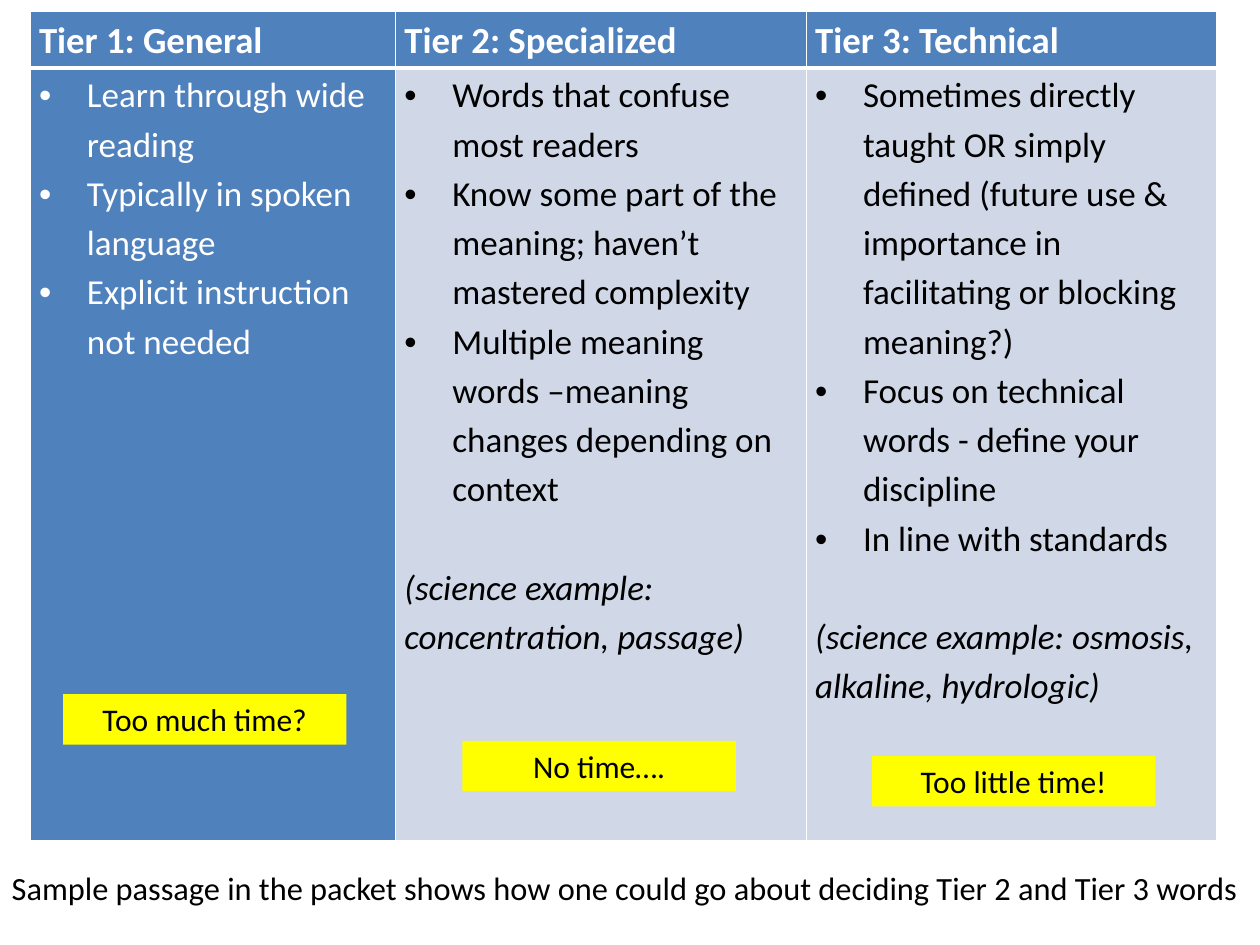
from lxml.etree import SubElement
from pptx import Presentation
from pptx.dml.color import RGBColor
from pptx.enum.shapes import MSO_SHAPE as Shape
from pptx.enum.text import MSO_ANCHOR as Anchor, PP_ALIGN as Align
from pptx.oxml import parse_xml
from pptx.oxml.ns import nsdecls, qn
from pptx.util import Inches, Pt

BLUE = RGBColor(0x4F, 0x81, 0xBD)
PALE = RGBColor(0xD0, 0xD8, 0xE8)
YELLOW = RGBColor(0xFF, 0xFF, 0x00)
WHITE = RGBColor(0xFF, 0xFF, 0xFF)
BLACK = RGBColor(0x00, 0x00, 0x00)

# heading, column width, fill, text colour, bullets, example
TIERS = [
    ("Tier 1: General", 2.9, BLUE, WHITE,
     ["Learn through wide reading",
      "Typically in spoken language",
      "Explicit instruction not needed"], None),
    ("Tier 2: Specialized", 3.26, PALE, BLACK,
     ["Words that confuse most readers",
      "Know some part of the meaning; haven’t mastered complexity",
      "Multiple meaning words –meaning changes depending on context"],
     "(science example: concentration, passage)"),
    ("Tier 3: Technical", 3.26, PALE, BLACK,
     ["Sometimes directly taught OR simply defined (future use & "
      "importance in facilitating or blocking meaning?)",
      "Focus on technical words - define your discipline",
      "In line with standards"],
     "(science example: osmosis, alkaline, hydrologic)"),
]

# text, left, top, width
TIME_LABELS = [
    ("Too much time?", 0.5, 5.51, 2.25),
    ("No time….", 3.67, 5.88, 2.17),
    ("Too little time!", 6.92, 6, 2.25),
]


def style(paragraph, size, color, bold=False, italic=False):
    for run in paragraph.runs:
        font = run.font
        font.name, font.size = "Calibri", Pt(size)
        font.color.rgb = color
        font.bold, font.italic = bold, italic


def format_cell(cell, fill, thick_side):
    """Set fill, margins and white borders, with a 3 pt line on thick_side."""
    cell.fill.solid()
    cell.fill.fore_color.rgb = fill
    cell.margin_left = cell.margin_right = Inches(0.07)
    cell.margin_top = cell.margin_bottom = 0
    properties = cell._tc.get_or_add_tcPr()
    for position, side in enumerate("LRTB"):
        width = Pt(3 if side == thick_side else 1)
        properties.insert(position, parse_xml(
            f'<a:ln{side} {nsdecls("a")} w="{width}"><a:solidFill>'
            f'<a:srgbClr val="{WHITE}"/></a:solidFill></a:ln{side}>'))


prs = Presentation()
prs.slide_width, prs.slide_height = Inches(10), Inches(7.5)
slide = prs.slides.add_slide(prs.slide_layouts[6])

table = slide.shapes.add_table(2, len(TIERS), Inches(0.24), Inches(0.09),
                               Inches(9.42), Inches(6.58)).table
table.horz_banding = False
table.rows[0].height, table.rows[1].height = Inches(0.45), Inches(6.13)

for column, (heading, width, fill, color, bullets, example) in enumerate(TIERS):
    table.columns[column].width = Inches(width)
    header, body = table.cell(0, column), table.cell(1, column)
    format_cell(header, BLUE, "B")
    format_cell(body, fill, "T")

    header.text_frame.text = heading
    title = header.text_frame.paragraphs[0]
    title.line_spacing = 1.15
    style(title, 21, WHITE, bold=True)

    body.text_frame.text = "\n".join(bullets)
    for item in body.text_frame.paragraphs:
        item.line_spacing = 1.15
        style(item, 20, color)
        indent = item._p.get_or_add_pPr()
        indent.set("marL", str(Inches(0.38)))
        indent.set("indent", str(-Inches(0.38)))
        SubElement(indent, qn("a:buFont"), typeface="Arial")
        SubElement(indent, qn("a:buChar"), char="•")

    if example:
        closing = body.text_frame.add_paragraph()
        closing.text = example
        closing.line_spacing = 1.15
        closing.space_before = Pt(28)
        style(closing, 20, color, italic=True)

footer = slide.shapes.add_textbox(Inches(-0.21), Inches(6.84),
                                  Inches(10.33), Inches(0.42)).text_frame
footer.word_wrap = True
footer.text = ("Sample passage in the packet shows how one could go about "
               "deciding Tier 2 and Tier 3 words")
footer.paragraphs[0].alignment = Align.CENTER
style(footer.paragraphs[0], 18.5, BLACK)

for text, left, top, width in TIME_LABELS:
    label = slide.shapes.add_shape(Shape.RECTANGLE, Inches(left), Inches(top),
                                   Inches(width), Inches(0.4))
    label.shadow.inherit = False
    label.fill.solid()
    label.fill.fore_color.rgb = YELLOW
    label.line.fill.background()
    label.text_frame.text = text
    label.text_frame.vertical_anchor = Anchor.TOP
    label.text_frame.paragraphs[0].alignment = Align.CENTER
    style(label.text_frame.paragraphs[0], 18, BLACK)

prs.save("out.pptx")
